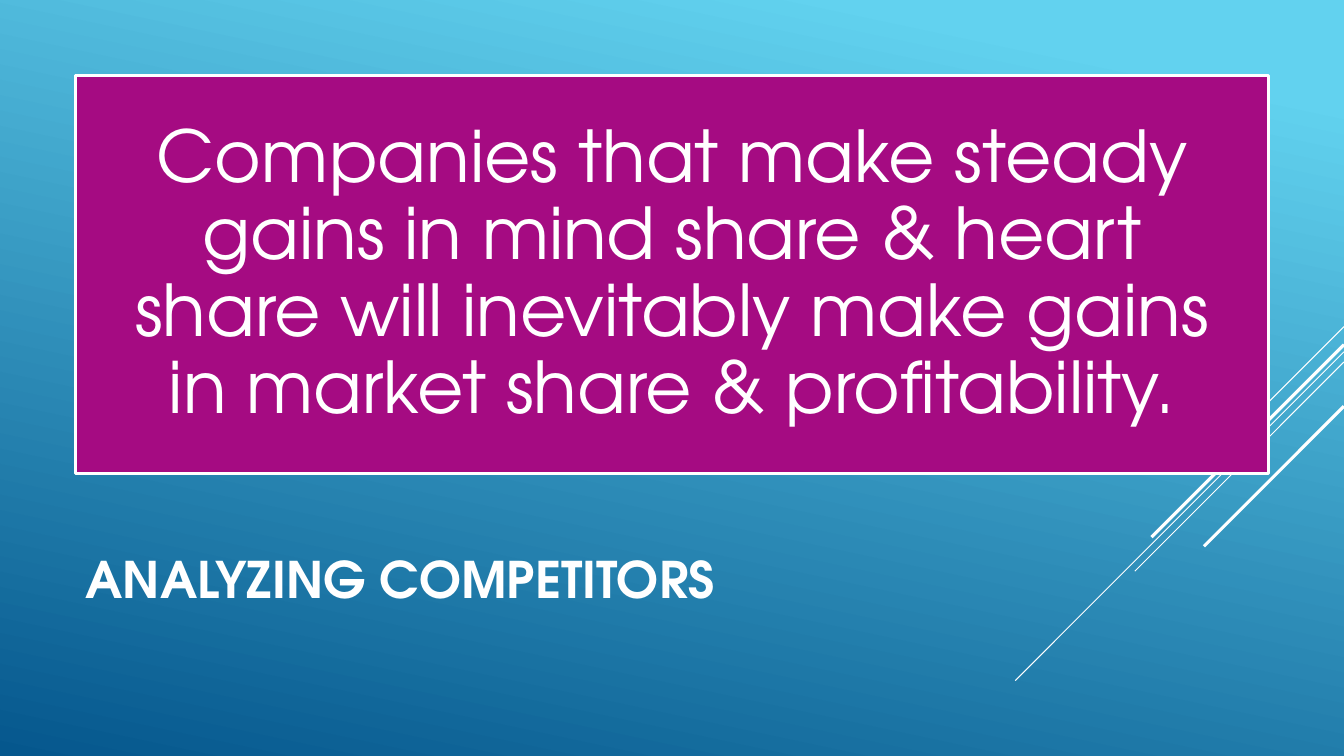
from typing import NamedTuple

from lxml.etree import SubElement
from pptx import Presentation
from pptx.dml.color import RGBColor
from pptx.enum.shapes import MSO_CONNECTOR as Link, MSO_SHAPE as Form
from pptx.enum.text import MSO_ANCHOR as Anchor, MSO_AUTO_SIZE as Fit, PP_ALIGN as Align
from pptx.oxml.ns import qn
from pptx.slide import Slide
from pptx.text.text import TextFrame
from pptx.util import Pt

WHITE = RGBColor(0xFF, 0xFF, 0xFF)
PLUM = RGBColor(0xA5, 0x0B, 0x82)
SKY = RGBColor(0x62, 0xD2, 0xEF)
NAVY = RGBColor(0x05, 0x57, 0x8D)
FONT = "TeX Gyre Adventor"
WIDE, HIGH = 960, 540
EDGE = 54


class Ray(NamedTuple):
    """A diagonal that falls leftward from the right edge at 45 degrees."""
    top: float
    run: float
    weight: float


RAYS = [
    Ray(233.3, 72, 0.75),
    Ray(251.3, 234.8, 0.75),
    Ray(258.6, 149.4, 0.75),
    Ray(246.2, 137.5, 2.25),
    Ray(290.2, 100, 2.25),
]


class Words(NamedTuple):
    text: str
    size: float
    bold: bool
    align: Align
    space: float
    pad_x: float
    pad_y: float


TITLE = Words("ANALYZING COMPETITORS", 36, True, Align.LEFT, 1.0, 7.2, 3.6)
QUOTE = Words(
    "Companies that make steady gains in mind share & heart share "
    "will inevitably make gains in market share & profitability.",
    51, False, Align.CENTER, 0.9, 28.8, 28.8)


def paint(slide: Slide) -> None:
    fill = slide.background.fill
    fill.gradient()
    fill.gradient_angle = 258
    for stop, (place, color) in zip(fill.gradient_stops, [(0.1, SKY), (1, NAVY)]):
        stop.position = place
        stop.color.rgb = color


def draw(slide: Slide, ray: Ray) -> None:
    line = slide.shapes.add_connector(
        Link.STRAIGHT, Pt(WIDE), Pt(ray.top), Pt(WIDE - ray.run), Pt(ray.top + ray.run))
    line.line.color.rgb = WHITE
    line.line.width = Pt(ray.weight)
    SubElement(line._element.spPr, qn("a:effectLst"))


def write(frame: TextFrame, words: Words) -> None:
    frame.word_wrap = True
    frame.auto_size = Fit.NONE
    frame.vertical_anchor = Anchor.MIDDLE
    frame.margin_left = frame.margin_right = Pt(words.pad_x)
    frame.margin_top = frame.margin_bottom = Pt(words.pad_y)
    para = frame.paragraphs[0]
    para.alignment = words.align
    para.line_spacing = words.space
    run = para.add_run()
    run.text = words.text
    run.font.name = FONT
    run.font.size = Pt(words.size)
    run.font.bold = words.bold
    run.font.color.rgb = WHITE


def main() -> None:
    deck = Presentation()
    deck.slide_width, deck.slide_height = Pt(WIDE), Pt(HIGH)
    slide = deck.slides.add_slide(deck.slide_layouts[5])
    paint(slide)

    # Diagonal rays
    for ray in RAYS:
        draw(slide, ray)

    # Title
    title = slide.shapes.title
    title.left, title.top = Pt(EDGE), Pt(353.5)
    title.width, title.height = Pt(672), Pt(118.8)
    write(title.text_frame, TITLE)

    # Statement panel
    panel = slide.shapes.add_shape(
        Form.RECTANGLE, Pt(EDGE), Pt(EDGE), Pt(WIDE - 2 * EDGE), Pt(284.4))
    panel.shadow.inherit = False
    panel.fill.solid()
    panel.fill.fore_color.rgb = PLUM
    panel.line.color.rgb = WHITE
    panel.line.width = Pt(2.25)
    write(panel.text_frame, QUOTE)

    deck.save("out.pptx")


if __name__ == "__main__":
    main()
